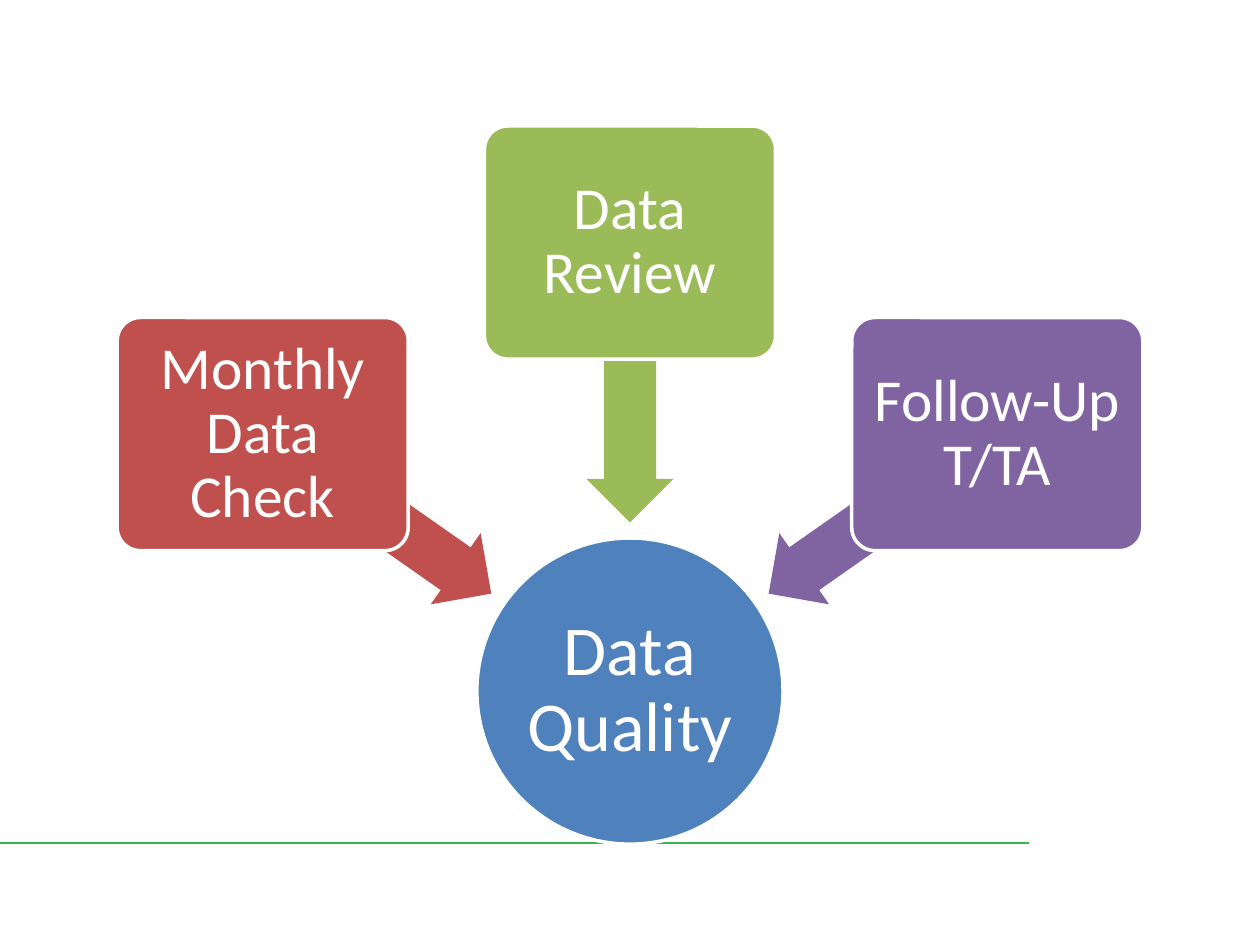
from pptx import Presentation
from pptx import util as u
from pptx.dml.color import RGBColor
from pptx.enum import shapes, text
from pptx.oxml.ns import qn
from lxml import etree

WHITE = RGBColor(0xFF, 0xFF, 0xFF)
BLUE = RGBColor(0x4F, 0x81, 0xBD)
RED = RGBColor(0xC0, 0x50, 0x4D)
GREEN = RGBColor(0x9B, 0xBB, 0x59)
PURPLE = RGBColor(0x80, 0x64, 0xA2)
RULE_GREEN = RGBColor(0x39, 0xB5, 0x4A)

# Content: label, colour, box top, arrow centre y, arrow rotation
GOAL = "Data Quality"
INPUTS = [
    ("Monthly Data Check", RED, 2.52, 4.075, 215),
    ("Data Review", GREEN, 1, 3.035, 270),
    ("Follow-Up T/TA", PURPLE, 2.52, 4.075, 325),
]

# Layout in inches, symmetric about the slide's centre line
CENTER_X = 5
BOX_STEP, BOX_WIDTH, BOX_HEIGHT = 2.915, 2.31, 1.85
ARROW_STEP, ARROW_WIDTH, ARROW_HEIGHT = 2.01, 2.22, 0.69
GOAL_TOP, GOAL_SIZE = 4.27, 2.43
RULE_Y, RULE_END = 6.69, 8.17


def add_filled(slide, kind, center_x, top, width, height, color):
    shape = slide.shapes.add_shape(
        kind, u.Inches(center_x - width / 2), u.Inches(top),
        u.Inches(width), u.Inches(height))
    shape.shadow.inherit = False
    shape.fill.solid()
    shape.fill.fore_color.rgb = color
    shape.line.fill.background()
    return shape


def add_label(shape, label, size, inset):
    shape.line.color.rgb = WHITE
    shape.line.width = u.Pt(2)
    frame = shape.text_frame
    frame.word_wrap = True
    frame.vertical_anchor = text.MSO_ANCHOR.MIDDLE
    frame.margin_left = frame.margin_right = u.Inches(inset)
    frame.margin_top = frame.margin_bottom = u.Inches(inset)
    paragraph = frame.paragraphs[0]
    paragraph.text = label
    paragraph.alignment = text.PP_ALIGN.CENTER
    paragraph.line_spacing = 0.9
    paragraph.font.name = "Calibri"
    paragraph.font.size = u.Pt(size)
    paragraph.font.color.rgb = WHITE


def main():
    presentation = Presentation()
    presentation.slide_width = u.Inches(10)
    presentation.slide_height = u.Inches(7.5)
    slide = presentation.slides.add_slide(presentation.slide_layouts[6])

    # Footer rule
    rule = slide.shapes.add_connector(
        shapes.MSO_CONNECTOR.STRAIGHT, 0, u.Inches(RULE_Y),
        u.Inches(RULE_END), u.Inches(RULE_Y))
    rule.line.color.rgb = RULE_GREEN
    rule.line.width = u.Pt(1.5)
    etree.SubElement(rule.element.spPr, qn("a:effectLst"))

    # Goal circle
    circle = add_filled(slide, shapes.MSO_SHAPE.OVAL, CENTER_X, GOAL_TOP,
                        GOAL_SIZE, GOAL_SIZE, BLUE)
    add_label(circle, GOAL, 40, 0.03)

    # Each input: an arrow towards the goal, then its box over the arrow's tail
    for index, (label, color, top, arrow_y, rotation) in enumerate(INPUTS):
        offset = index - 1
        arrow = add_filled(slide, shapes.MSO_SHAPE.LEFT_ARROW,
                           CENTER_X + offset * ARROW_STEP,
                           arrow_y - ARROW_HEIGHT / 2,
                           ARROW_WIDTH, ARROW_HEIGHT, color)
        arrow.adjustments[0] = 0.6
        arrow.adjustments[1] = 0.5
        arrow.rotation = rotation
        box = add_filled(slide, shapes.MSO_SHAPE.ROUNDED_RECTANGLE,
                         CENTER_X + offset * BOX_STEP, top,
                         BOX_WIDTH, BOX_HEIGHT, color)
        box.adjustments[0] = 0.1
        add_label(box, label, 34, 0.07)

    presentation.save("out.pptx")


if __name__ == "__main__":
    main()
